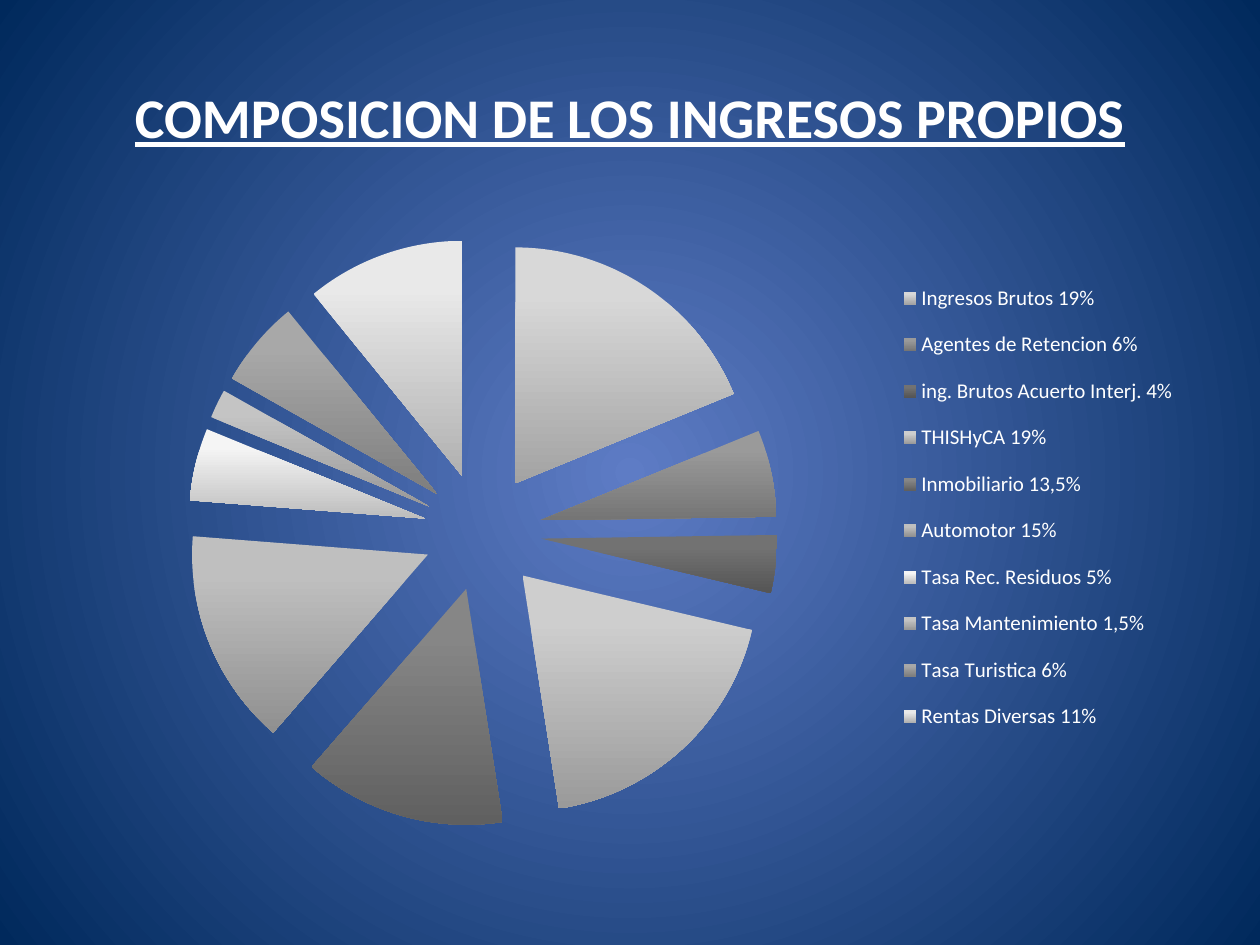
from lxml.etree import SubElement
from pptx import Presentation
from pptx.chart.data import CategoryChartData
from pptx.dml.color import RGBColor
from pptx.enum.chart import XL_CHART_TYPE, XL_LEGEND_POSITION
from pptx.enum.text import MSO_ANCHOR, PP_ALIGN
from pptx.oxml.ns import qn
from pptx.util import Pt

SOURCES = [
    ("Ingresos Brutos 19%", 19, "D8D8D8", "A3A3A3"),
    ("Agentes de Retencion 6%", 6, "9A9A9A", "757575"),
    ("ing. Brutos Acuerto Interj. 4%", 4, "727272", "555555"),
    ("THISHyCA 19%", 19, "CECECE", "9A9A9A"),
    ("Inmobiliario 13,5%", 14, "868686", "606060"),
    ("Automotor 15%", 15, "BFBFBF", "909090"),
    ("Tasa Rec. Residuos 5%", 5, "F5F5F5", "BDBDBD"),
    ("Tasa Mantenimiento 1,5%", 2, "C4C4C4", "989898"),
    ("Tasa Turistica 6%", 6, "A8A8A8", "7E7E7E"),
    ("Rentas Diversas 11%", 11, "E9E9E9", "B0B0B0"),
]


def color(value):
    return RGBColor.from_string(value)


class SlideBuilder:
    font_name = "Calibri"
    text_color = "FFFFFF"

    def __init__(self, slide):
        self.slide = slide

    def style_font(self, font, **values):
        for name, value in {"name": self.font_name, **values}.items():
            setattr(font, name, value)
        font.color.rgb = color(self.text_color)

    def gradient(self, fill, colors, start=0):
        fill.gradient()
        for stop, value, position in zip(fill.gradient_stops, colors, (start, 1)):
            stop.color.rgb = color(value)
            stop.position = position

    def background(self, center, edge):
        self.gradient(self.slide.background.fill, (center, edge))
        gradient = next(self.slide.element.iter(qn("a:gradFill")))
        gradient.remove(gradient.find(qn("a:lin")))
        radial = SubElement(gradient, qn("a:path"), {"path": "circle"})
        SubElement(radial, qn("a:fillToRect"), dict.fromkeys("ltrb", "50000"))

    def title(self, text, left, top, width, height):
        box = self.slide.shapes.title
        bounds = {"left": left, "top": top, "width": width, "height": height}
        for name, value in bounds.items():
            setattr(box, name, Pt(value))
        box.text_frame.vertical_anchor = MSO_ANCHOR.MIDDLE
        para = box.text_frame.paragraphs[0]
        para.alignment = PP_ALIGN.CENTER
        span = para.add_run()
        span.text = text
        self.style_font(span.font, size=Pt(32), bold=True, underline=True)

    def layout(self, parent, index, **fractions):
        for old in parent.findall(qn("c:layout")):
            parent.remove(old)
        layout = SubElement(parent, qn("c:layout"))
        parent.insert(index, layout)
        manual = SubElement(layout, qn("c:manualLayout"))
        if parent.tag == qn("c:plotArea"):
            SubElement(manual, qn("c:layoutTarget"), val="inner")
        for name in ("xMode", "yMode"):
            SubElement(manual, qn(f"c:{name}"), val="edge")
        for name, value in fractions.items():
            SubElement(manual, qn(f"c:{name}"), val=str(value))

    def pie(self, sources, left, top, width, height, explosion):
        data = CategoryChartData()
        data.categories = [source[0] for source in sources]
        data.add_series("Series 1", [source[1] for source in sources])
        chart = self.slide.shapes.add_chart(
            XL_CHART_TYPE.PIE, Pt(left), Pt(top), Pt(width), Pt(height), data
        ).chart
        chart.has_title = False
        self.style_font(chart.font, size=Pt(10))
        plot = chart.plots[0]
        plot.vary_by_categories = True
        series = plot.series[0]
        for index, (_, _, light, dark) in enumerate(sources):
            point = series.points[index].format
            self.gradient(point.fill, (light, dark), start=0.2)
            point.fill.gradient_angle = 270
            point.line.fill.background()
        element = SubElement(series._element, qn("c:explosion"), val=str(explosion))
        series._element.find(qn("c:dPt")).addprevious(element)
        chart.has_legend = True
        legend = chart.legend
        legend.position = XL_LEGEND_POSITION.RIGHT
        legend.include_in_layout = False
        self.style_font(legend.font, size=Pt(12))
        self.layout(legend._element, 1, x=0.73, y=0.07, w=0.26, h=0.78)
        plot_area = chart._chartSpace.chart.plotArea
        self.layout(plot_area, 0, x=0.11, y=0.02, w=0.52, h=0.96)


def main():
    deck = Presentation()
    deck.slide_width, deck.slide_height = Pt(720), Pt(540)
    page = SlideBuilder(deck.slides.add_slide(deck.slide_layouts[5]))
    page.background("5E7CC5", "00295C")
    page.title("COMPOSICION DE LOS INGRESOS PROPIOS", 36, 21.6, 648, 90)
    page.pie(SOURCES, 36, 126, 648, 356.4, explosion=25)
    deck.save("out.pptx")


if __name__ == "__main__":
    main()
